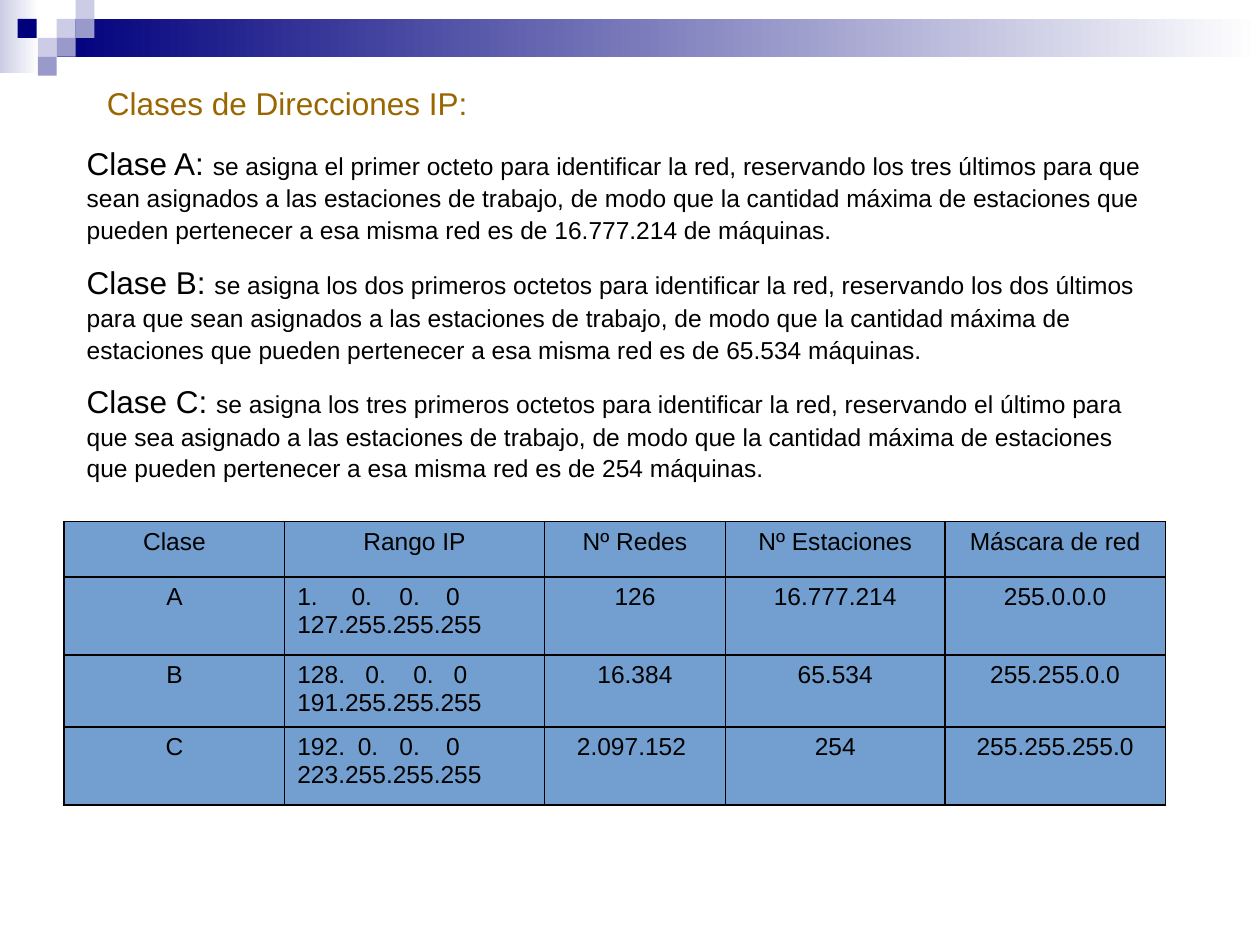
from typing import NamedTuple

from lxml.etree import SubElement
from pptx import Presentation
from pptx.dml.color import RGBColor
from pptx.enum.shapes import MSO_SHAPE as Preset
from pptx.enum.text import PP_ALIGN as Align
from pptx.oxml.ns import qn
from pptx.util import Inches, Pt

COLORS = {
    "navy": "00007D", "lilac": "CCCCE6", "violet": "9999CC", "white": "FFFFFF",
    "gold": "996600", "black": "000000", "cell": "729FCF",
}
FONT = "Arial"
HEADING_SIZE, BODY_SIZE = 18, 14
LINE_SPACING = 1.07


class Box(NamedTuple):
    left: float
    top: float
    width: float
    height: float


class Span(NamedTuple):
    text: str
    size: int
    color: str = "black"


class AddressRange(NamedTuple):
    first: str
    last: str
    stops: tuple[float, ...]  # tab positions of the octets


GRADIENTS = [
    (Box(0, 0, 0.31, 0.58), "lilac"),
    (Box(0.45, 0.15, 9.55, 0.3), "navy"),
]
SQUARE = 0.15
SQUARES = [
    (0.45, 0.15, "lilac"), (0.6, 0, "lilac"), (0.6, 0.15, "violet"),
    (0.3, 0.3, "lilac"), (0.14, 0.15, "navy"), (0.45, 0.3, "violet"),
    (0.3, 0.45, "violet"),
]
CLASSES = [
    (1.07, 0.87, "Clase A: ",
     "se asigna el primer octeto para identificar la red, reservando los tres "
     "últimos para que sean asignados a las estaciones de trabajo, de modo que "
     "la cantidad máxima de estaciones que pueden pertenecer a esa misma red "
     "es de 16.777.214 de máquinas."),
    (2.02, 0.93, "Clase B: ",
     "se asigna los dos primeros octetos para identificar la red, reservando "
     "los dos últimos para que sean asignados a las estaciones de trabajo, de "
     "modo que la cantidad máxima de estaciones que pueden pertenecer a esa "
     "misma red es de 65.534 máquinas."),
    (2.96, 0.93, "Clase C: ",
     "se asigna los tres primeros octetos para identificar la red, reservando "
     "el último para que sea asignado a las estaciones de trabajo, de modo que "
     "la cantidad máxima de estaciones que pueden pertenecer a esa misma red "
     "es de 254 máquinas."),
]
TABLE_BOX = Box(0.51, 4.14, 8.74, 2.24)
COLUMN_WIDTHS = [1.75, 2.06, 1.44, 1.74, 1.75]
ROW_HEIGHTS = [0.44, 0.62, 0.57, 0.62]
ROWS = [
    ["Clase", "Rango IP", "Nº Redes", "Nº Estaciones", "Máscara de red"],
    ["A", AddressRange("1.\t0.\t0.\t0", "127.255.255.255", (0.43, 0.81, 1.18)),
     "126", "16.777.214", "255.0.0.0"],
    ["B", AddressRange("128.\t0.\t0.\t0", "191.255.255.255", (0.54, 0.92, 1.24)),
     "16.384", "65.534", "255.255.0.0"],
    ["C", AddressRange("192.\t0.\t0.\t0", "223.255.255.255", (0.48, 0.81, 1.18)),
     "2.097.152 ", "254", "255.255.255.0"],
]


def rgb(name: str) -> RGBColor:
    return RGBColor.from_string(COLORS[name])


def inches(box: Box) -> list[Inches]:
    return [Inches(length) for length in box]


def set_font(font, size: int, color: str) -> None:
    font.name = FONT
    font.size = Pt(size)
    font.color.rgb = rgb(color)


def add_block(slide, box: Box, color: str, fades: bool = False) -> None:
    """Draw a borderless rectangle, optionally fading to white on the right."""
    block = slide.shapes.add_shape(Preset.RECTANGLE, *inches(box))
    block.shadow.inherit = False
    block.line.fill.background()
    if fades:
        block.fill.gradient()
        block.fill.gradient_angle = 0
        for stop, name in zip(block.fill.gradient_stops, (color, "white")):
            stop.color.rgb = rgb(name)
    else:
        block.fill.solid()
        block.fill.fore_color.rgb = rgb(color)


def add_text(slide, box: Box, spans: list[Span]) -> None:
    frame = slide.shapes.add_textbox(*inches(box)).text_frame
    frame.word_wrap = True
    para = frame.paragraphs[0]
    para.line_spacing = LINE_SPACING
    for span in spans:
        run = para.add_run()
        run.text = span.text
        set_font(run.font, span.size, span.color)


def add_borders(cell) -> None:
    properties = cell._tc.get_or_add_tcPr()
    for side in ("a:lnL", "a:lnR", "a:lnT", "a:lnB"):
        line = SubElement(properties, qn(side), w=str(Pt(1)))
        fill = SubElement(line, qn("a:solidFill"))
        SubElement(fill, qn("a:srgbClr"), val=COLORS["black"])


def add_tab_stops(para, stops: tuple[float, ...]) -> None:
    tabs = SubElement(para._p.get_or_add_pPr(), qn("a:tabLst"))
    for stop in stops:
        SubElement(tabs, qn("a:tab"), pos=str(Inches(stop)), algn="l")


def fill_cell(cell, content: str | AddressRange) -> None:
    add_borders(cell)
    cell.fill.solid()
    cell.fill.fore_color.rgb = rgb("cell")
    frame = cell.text_frame
    if isinstance(content, AddressRange):
        frame.text = f"{content.first}\n{content.last}"
        add_tab_stops(frame.paragraphs[0], content.stops)
    else:
        frame.text = content
        frame.paragraphs[0].alignment = Align.CENTER
    for para in frame.paragraphs:
        set_font(para.font, BODY_SIZE, "black")


def add_class_table(slide) -> None:
    table = slide.shapes.add_table(
        len(ROWS), len(COLUMN_WIDTHS), *inches(TABLE_BOX)).table
    table.first_row = table.horz_banding = False
    for column, width in zip(table.columns, COLUMN_WIDTHS):
        column.width = Inches(width)
    for row, height, contents in zip(table.rows, ROW_HEIGHTS, ROWS):
        row.height = Inches(height)
        for cell, content in zip(row.cells, contents):
            fill_cell(cell, content)


def main() -> None:
    deck = Presentation()
    deck.slide_width, deck.slide_height = Inches(10), Inches(7.5)
    slide = deck.slides.add_slide(deck.slide_layouts[6])

    # Header band and its squares
    for box, color in GRADIENTS:
        add_block(slide, box, color, fades=True)
    for left, top, color in SQUARES:
        add_block(slide, Box(left, top, SQUARE, SQUARE), color)

    # Title and class descriptions
    add_text(slide, Box(0.75, 0.6, 6.14, 0.4),
             [Span("Clases de Direcciones IP:", HEADING_SIZE, "gold")])
    for top, height, label, description in CLASSES:
        add_text(slide, Box(0.59, top, 8.66, height),
                 [Span(label, HEADING_SIZE), Span(description, BODY_SIZE)])

    # Summary of the address classes
    add_class_table(slide)
    deck.save("out.pptx")


if __name__ == "__main__":
    main()
